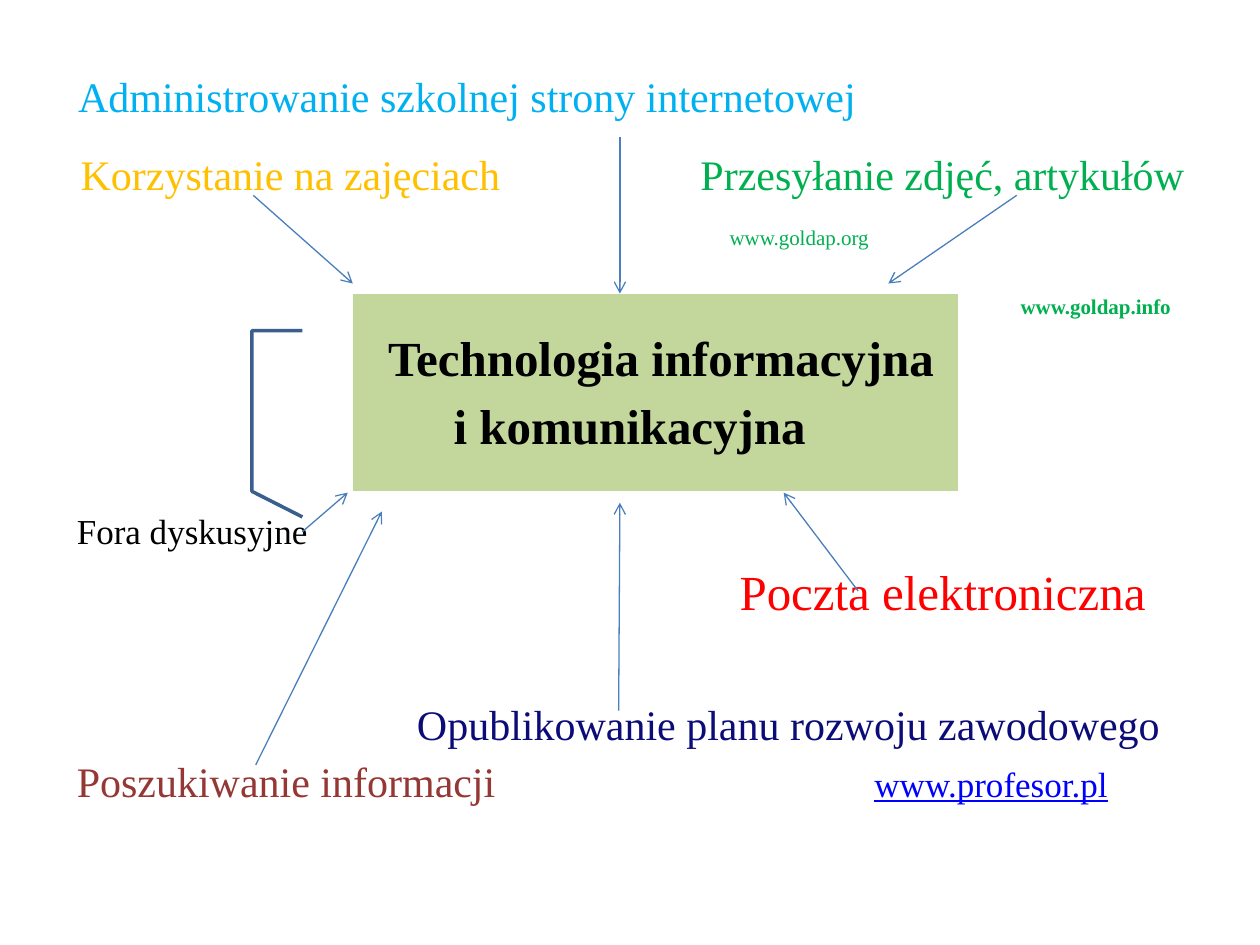
from lxml.etree import SubElement
from pptx import Presentation
from pptx.dml.color import RGBColor
from pptx.enum.shapes import MSO_CONNECTOR as LINK, MSO_SHAPE as SHAPE
from pptx.oxml.ns import qn
from pptx.util import Inches, Pt


def colour(value):
    """Turn a hex string into a colour."""
    return RGBColor.from_string(value)


class MindMap:
    """Holds the style and the current slide."""

    font = "Times New Roman"
    arrow_colour = "4B7EBC"

    def __init__(self, slide):
        """Keep the slide to draw on."""
        self.slide = slide

    def callout(self, left, top, width, height, fill, border):
        """Add a borderless callout with a bent leader line."""
        topic = self.slide.shapes.add_shape(
            SHAPE.LINE_CALLOUT_3_NO_BORDER,
            Inches(left), Inches(top), Inches(width), Inches(height))
        topic.shadow.inherit = False
        topic.fill.solid()
        topic.fill.fore_color.rgb = colour(fill)
        topic.line.color.rgb = colour(border)
        topic.line.width = Pt(2)

    def label(self, words, left, top, width, size, ink, bold=False, underline=False):
        """Add one line of text without margins."""
        box = self.slide.shapes.add_textbox(
            Inches(left), Inches(top), Inches(width), Pt(size * 1.15))
        frame = box.text_frame
        frame.word_wrap = True
        frame.margin_left = frame.margin_right = 0
        frame.margin_top = frame.margin_bottom = 0
        frame.text = words
        font = frame.paragraphs[0].runs[0].font
        font.name, font.size = self.font, Pt(size)
        font.bold, font.underline = bold, underline
        font.color.rgb = colour(ink)

    def arrow(self, start, end):
        """Add a thin line with an open arrowhead at its end."""
        link = self.slide.shapes.add_connector(
            LINK.STRAIGHT, *(Inches(length) for length in (*start, *end)))
        link.line.color.rgb = colour(self.arrow_colour)
        link.line.width = Pt(0.75)
        SubElement(link.line._get_or_add_ln(), qn("a:tailEnd"), type="arrow")
        SubElement(link._element.spPr, qn("a:effectLst"))


def main():
    """Build the slide and save it."""
    deck = Presentation()
    deck.slide_width, deck.slide_height = Inches(10), Inches(7.5)
    mind_map = MindMap(deck.slides.add_slide(deck.slide_layouts[6]))

    mind_map.callout(2.8, 2.33, 4.8, 1.57, "C3D69B", "3A5F8C")

    labels = [
        ("Administrowanie szkolnej strony internetowej", 0.62, 0.56, 6.4, 24, "00B0F0"),
        ("Korzystanie na zajęciach", 0.64, 1.18, 3.5, 24, "FFC000"),
        ("Przesyłanie zdjęć, artykułów", 5.56, 1.18, 4, 24, "00B050"),
        ("www.goldap.org", 5.79, 1.78, 1.3, 12, "00B050"),
        ("www.goldap.info", 8.1, 2.33, 1.4, 12, "00B050", True),
        ("Technologia informacyjna", 3.08, 2.6, 4.5, 28, "000000", True),
        ("i komunikacyjna", 3.6, 3.14, 3, 28, "000000", True),
        ("Fora dyskusyjne", 0.61, 4.04, 2, 20, "000000"),
        ("Poczta elektroniczna", 5.87, 4.46, 3.4, 28, "FF0000"),
        ("Opublikowanie planu rozwoju zawodowego", 3.31, 5.54, 6.1, 24, "0C0C78"),
        ("Poszukiwanie informacji", 0.61, 6, 3.5, 24, "953735"),
        ("www.profesor.pl", 6.94, 6.05, 2, 20, "0000FF", False, True),
    ]
    for entry in labels:
        mind_map.label(*entry)

    arrows = [
        ((4.91, 5.64), (4.92, 3.99)),
        ((2.03, 6.07), (3.03, 4.06)),
        ((6.81, 4.69), (6.22, 3.91)),
        ((2.01, 1.55), (2.8, 2.25)),
        ((4.92, 1.09), (4.92, 2.33)),
        ((8.07, 1.55), (7.05, 2.25)),
        ((2.4, 4.22), (2.76, 3.91)),
    ]
    for start, end in arrows:
        mind_map.arrow(start, end)

    deck.save("out.pptx")


if __name__ == "__main__":
    main()
